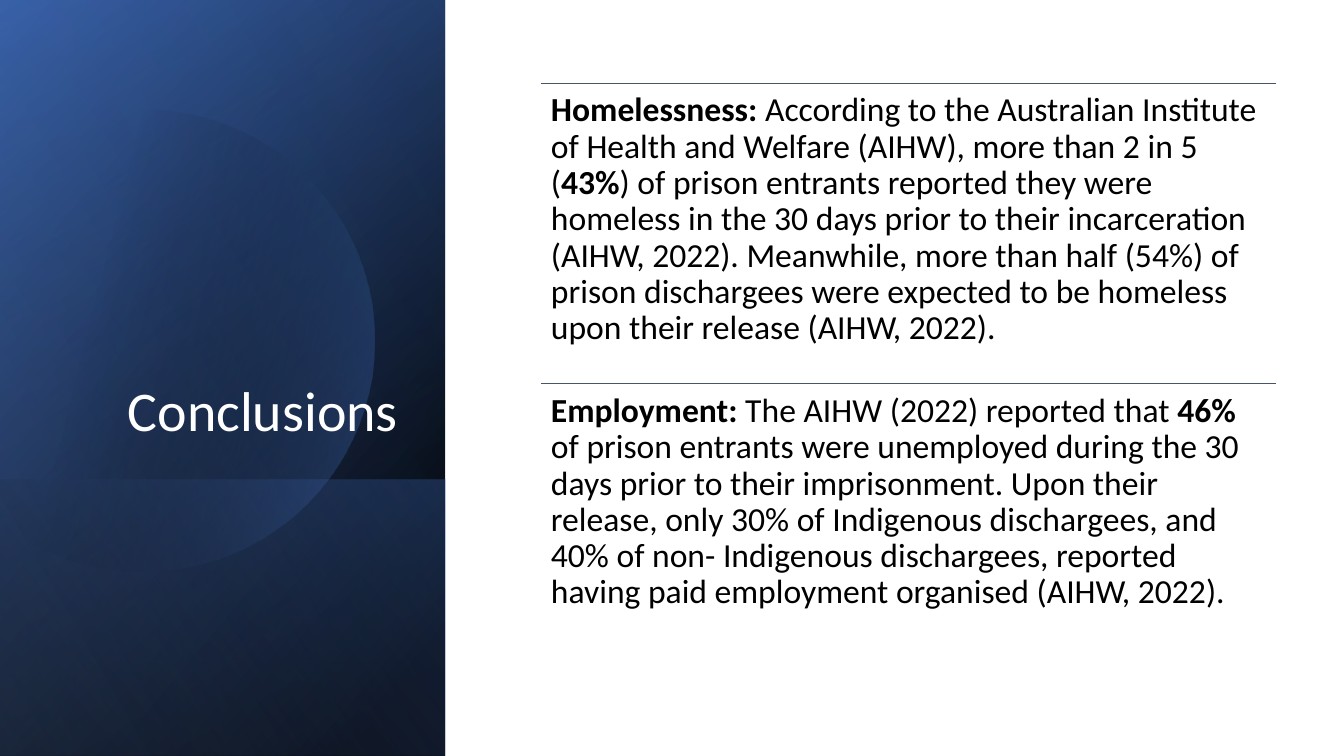
from math import acos, cos, sin

from pptx import Presentation
from pptx.dml.color import RGBColor
from pptx.enum.shapes import MSO_CONNECTOR, MSO_SHAPE
from pptx.enum.text import MSO_ANCHOR, PP_ALIGN
from pptx.oxml import parse_xml
from pptx.oxml.ns import nsdecls
from pptx.util import Pt

EMU_PER_PX = 914400 / 100.8
SLIDE_W, SLIDE_H = 1344, 756
PANEL_W = 445
FONT = "Calibri"

CONCLUSIONS = [
    [("Homelessness: ", True),
     ("According to the Australian Institute of Health and Welfare (AIHW), "
      "more than 2 in 5 (", False),
     ("43%", True),
     (") of prison entrants reported they were homeless in the 30 days prior "
      "to their incarceration (AIHW, 2022). Meanwhile, more than half (54%) "
      "of prison dischargees were expected to be homeless upon their release "
      "(AIHW, 2022).", False)],
    [("Employment: ", True),
     ("The AIHW (2022) reported that ", False),
     ("46%", True),
     (" of prison entrants were unemployed during the 30 days prior to their "
      "imprisonment. Upon their release, only 30% of Indigenous dischargees, "
      "and 40% of non- Indigenous dischargees, reported having paid "
      "employment organised (AIHW, 2022).", False)],
]


def px(length):
    return round(length * EMU_PER_PX)


def color(hex_string):
    return RGBColor.from_string(hex_string)


def set_gradient(shape, stops, angle):
    """Fill with (position %, colour, opacity %) stops along an angle."""
    stop_xml = "".join(
        f'<a:gs pos="{position * 1000}"><a:srgbClr val="{hex_string}">'
        f'<a:alpha val="{opacity * 1000}"/></a:srgbClr></a:gs>'
        for position, hex_string, opacity in stops)
    gradient = parse_xml(
        f'<a:gradFill {nsdecls("a")} rotWithShape="1"><a:gsLst>{stop_xml}'
        f'</a:gsLst><a:lin ang="{angle * 60000}" scaled="0"/></a:gradFill>')
    shape.fill.background()
    properties = shape._element.spPr
    properties.replace(properties.find("{*}noFill"), gradient)
    shape.line.fill.background()
    shape.shadow.inherit = False


def add_gradient_panel(slide, box, stops, angle):
    """Cover the box with a mirrored rectangle turned by a quarter."""
    left, top, width, height = box
    shift = (height - width) / 2
    shape = slide.shapes.add_shape(
        MSO_SHAPE.RECTANGLE, px(left - shift), px(top + shift),
        px(height), px(width))
    shape.rotation = 90
    shape._element.spPr.xfrm.set("flipH", "1")
    set_gradient(shape, stops, angle)


def add_cut_circle(slide, left, center_x, center_y, radius, stops, angle):
    """Draw a circle cut off by a vertical edge at left."""
    limit = acos((left - center_x) / radius)
    steps = 120
    turns = [limit * (2 * step / steps - 1) for step in range(steps + 1)]
    points = [(px(center_x + radius * cos(turn)),
               px(center_y + radius * sin(turn))) for turn in turns]
    builder = slide.shapes.build_freeform(*points[0])
    builder.add_line_segments(points[1:], close=True)
    set_gradient(builder.convert_to_shape(), stops, angle)


def add_text(slide, box, runs, size, hex_string, align, anchor, inset_y):
    frame = slide.shapes.add_textbox(*map(px, box)).text_frame
    frame_format = {
        "word_wrap": True, "vertical_anchor": anchor,
        "margin_left": px(10), "margin_right": px(10),
        "margin_top": px(inset_y), "margin_bottom": px(inset_y),
    }
    for name, value in frame_format.items():
        setattr(frame, name, value)
    paragraph = frame.paragraphs[0]
    paragraph.alignment = align
    paragraph.line_spacing = 0.9
    for text, bold in runs:
        run = paragraph.add_run()
        run.text = text
        run.font.color.rgb = color(hex_string)
        for name, value in {"name": FONT, "size": Pt(size), "bold": bold}.items():
            setattr(run.font, name, value)


def add_title_panel(slide, box):
    left, top, width, height = box
    foot = (left, top + 480, width, height - 480)
    # Base colour and shading
    add_gradient_panel(slide, box, [(8, "000000", 100), (100, "2F5597", 100)], 50)
    add_gradient_panel(slide, box, [(0, "000000", 0), (99, "4472C4", 46)], 30)
    add_gradient_panel(slide, foot, [(2, "4472C4", 29), (100, "000000", 30)], 130)
    # Circle and sheen
    add_cut_circle(slide, left, left + 143, top + 341, 231,
                   [(29, "000000", 0), (100, "4472C4", 43)], 14)
    add_gradient_panel(slide, box, [(0, "000000", 0), (99, "8FAADC", 11)], 120)
    # Title
    add_text(slide, (left + 64, top + 185, 344, 264), [("Conclusions", False)],
             40, "FFFFFF", PP_ALIGN.RIGHT, MSO_ANCHOR.BOTTOM, 5)


def add_conclusions(slide, box):
    left, top, width, height = box
    row_height = height / len(CONCLUSIONS)
    for index, runs in enumerate(CONCLUSIONS):
        row_top = top + index * row_height
        # Rule above the row
        rule = slide.shapes.add_connector(
            MSO_CONNECTOR.STRAIGHT, px(left), px(row_top),
            px(left + width), px(row_top))
        rule.line.color.rgb = color("44546A")
        rule.line.width = Pt(0.5)
        rule._element.spPr.append(parse_xml(f'<a:effectLst {nsdecls("a")}/>'))
        # Row text
        add_text(slide, (left, row_top, width, row_height), runs,
                 24, "000000", PP_ALIGN.LEFT, MSO_ANCHOR.TOP, 10)


def main():
    presentation = Presentation()
    presentation.slide_width = px(SLIDE_W)
    presentation.slide_height = px(SLIDE_H)
    slide = presentation.slides.add_slide(presentation.slide_layouts[6])
    add_title_panel(slide, (0, 0, PANEL_W, SLIDE_H))
    add_conclusions(slide, (541, 83, 735, 601))
    presentation.save("out.pptx")


if __name__ == "__main__":
    main()
